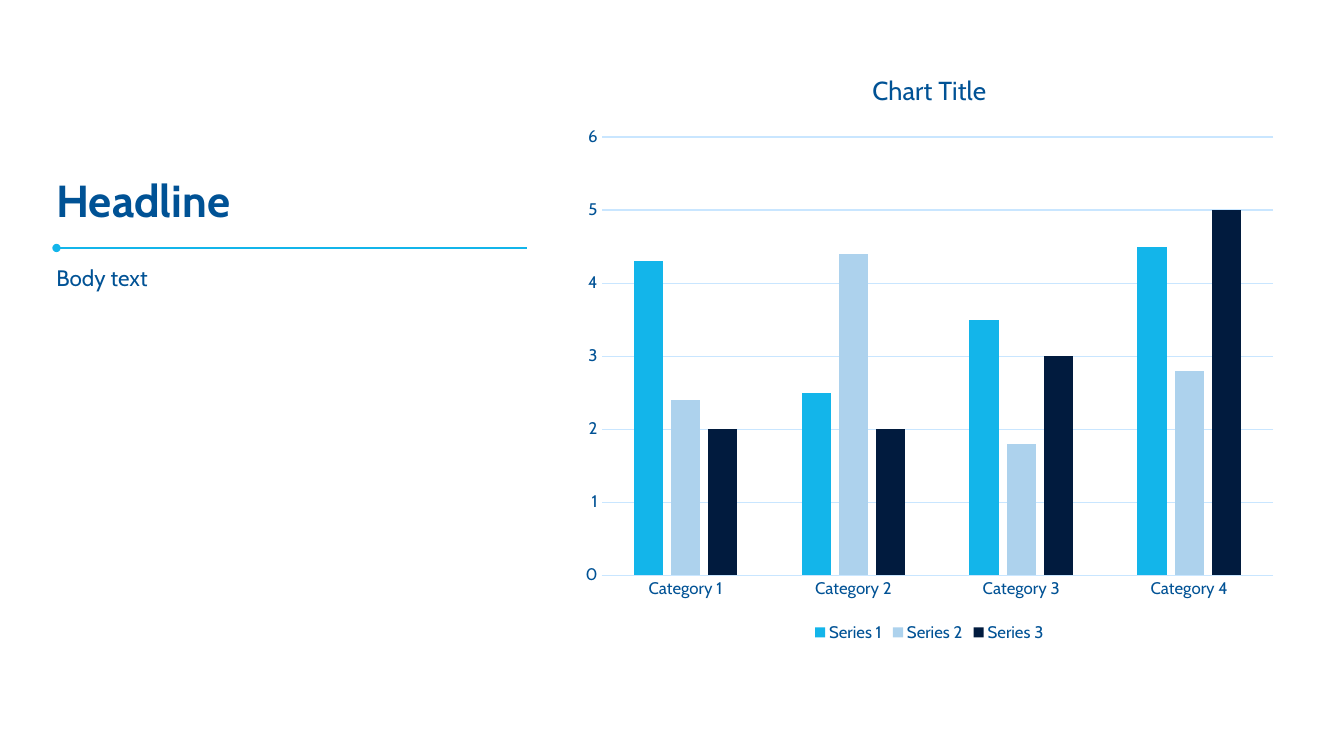
from dataclasses import dataclass

from lxml.etree import SubElement
from pptx import Presentation
from pptx.chart.data import CategoryChartData
from pptx.dml.color import RGBColor
from pptx.enum.chart import XL_CHART_TYPE, XL_LEGEND_POSITION, XL_TICK_MARK
from pptx.enum.shapes import MSO_CONNECTOR
from pptx.enum.text import MSO_ANCHOR
from pptx.oxml.ns import qn
from pptx.util import Inches, Pt

WIDTH, HEIGHT = Inches(13.33), Inches(7.5)
FONT = "Cabin"
COLORS = {
    "text": "005295",
    "accent": "13B5EA",
    "pale": "ADD2ED",
    "navy": "011B3E",
    "grid": "C9E6FF",
}

# Shares of the slide's width and height
LEFT = 0.042
COLUMN = 0.35
RULE_Y = 0.328


@dataclass(frozen=True)
class Passage:
    text: str
    top: float
    height: float
    size: int
    bold: bool
    anchor: MSO_ANCHOR


@dataclass(frozen=True)
class Bars:
    name: str
    values: tuple[float, ...]
    color: str


PASSAGES = (
    Passage("Headline", 0.067, 0.233, 32, True, MSO_ANCHOR.BOTTOM),
    Passage("Body text", 0.353, 0.459, 16, False, MSO_ANCHOR.TOP),
)
CATEGORIES = [f"Category {number}" for number in range(1, 5)]
SERIES = (
    Bars("Series 1", (4.3, 2.5, 3.5, 4.5), "accent"),
    Bars("Series 2", (2.4, 4.4, 1.8, 2.8), "pale"),
    Bars("Series 3", (2, 2, 3, 5), "navy"),
)


def across(share: float) -> int:
    return round(WIDTH * share)


def down(share: float) -> int:
    return round(HEIGHT * share)


def rgb(color: str) -> RGBColor:
    return RGBColor.from_string(COLORS[color])


def style_font(font, size: float, bold: bool = False) -> None:
    font.name = FONT
    font.size = Pt(size)
    font.bold = bold
    font.color.rgb = rgb("text")


def style_line(line, color: str, width: float) -> None:
    line.color.rgb = rgb(color)
    line.width = Pt(width)


def add_passage(slide, passage: Passage) -> None:
    frame = slide.shapes.add_textbox(
        across(LEFT), down(passage.top), across(COLUMN), down(passage.height)
    ).text_frame
    frame.word_wrap = True
    frame.vertical_anchor = passage.anchor
    frame.margin_left = frame.margin_right = 0
    frame.margin_top = frame.margin_bottom = 0
    frame.text = passage.text
    paragraph = frame.paragraphs[0]
    paragraph.line_spacing = 0.9
    style_font(paragraph.runs[0].font, passage.size, passage.bold)


def add_rule(slide) -> None:
    rule = slide.shapes.add_connector(
        MSO_CONNECTOR.STRAIGHT,
        across(LEFT), down(RULE_Y), across(LEFT + COLUMN), down(RULE_Y),
    )
    style_line(rule.line, "accent", 1)
    SubElement(rule.line._get_or_add_ln(), qn("a:headEnd"), type="oval")
    SubElement(rule._element.spPr, qn("a:effectLst"))


def add_column_chart(slide) -> None:
    chart_data = CategoryChartData()
    chart_data.categories = CATEGORIES
    for bars in SERIES:
        chart_data.add_series(bars.name, bars.values)
    chart = slide.shapes.add_chart(
        XL_CHART_TYPE.COLUMN_CLUSTERED,
        across(0.425), down(0.067), across(0.533), down(0.788), chart_data,
    ).chart
    style_font(chart.font, 10)

    # Title and legend
    chart.has_title = True
    heading = chart.chart_title.text_frame
    heading.text = "Chart Title"
    style_font(heading.paragraphs[0].runs[0].font, 18.6)
    chart.chart_title.include_in_layout = False
    chart.has_legend = True
    chart.legend.position = XL_LEGEND_POSITION.BOTTOM
    chart.legend.include_in_layout = False
    style_font(chart.legend.font, 12)

    # Axes
    for axis in (chart.category_axis, chart.value_axis):
        axis.major_tick_mark = axis.minor_tick_mark = XL_TICK_MARK.NONE
        style_font(axis.tick_labels.font, 12)
    style_line(chart.category_axis.format.line, "grid", 0.75)
    values = chart.value_axis
    values.minimum_scale, values.maximum_scale, values.major_unit = 0, 6, 1
    values.format.line.fill.background()
    style_line(values.major_gridlines.format.line, "grid", 0.75)

    # Columns
    plot = chart.plots[0]
    plot.gap_width, plot.overlap = 219, -27
    plot.vary_by_categories = False
    for series, bars in zip(plot.series, SERIES):
        series.format.fill.solid()
        series.format.fill.fore_color.rgb = rgb(bars.color)


def main() -> None:
    presentation = Presentation()
    presentation.slide_width, presentation.slide_height = WIDTH, HEIGHT
    slide = presentation.slides.add_slide(presentation.slide_layouts[6])
    add_rule(slide)
    for passage in PASSAGES:
        add_passage(slide, passage)
    add_column_chart(slide)
    presentation.save("out.pptx")


if __name__ == "__main__":
    main()
